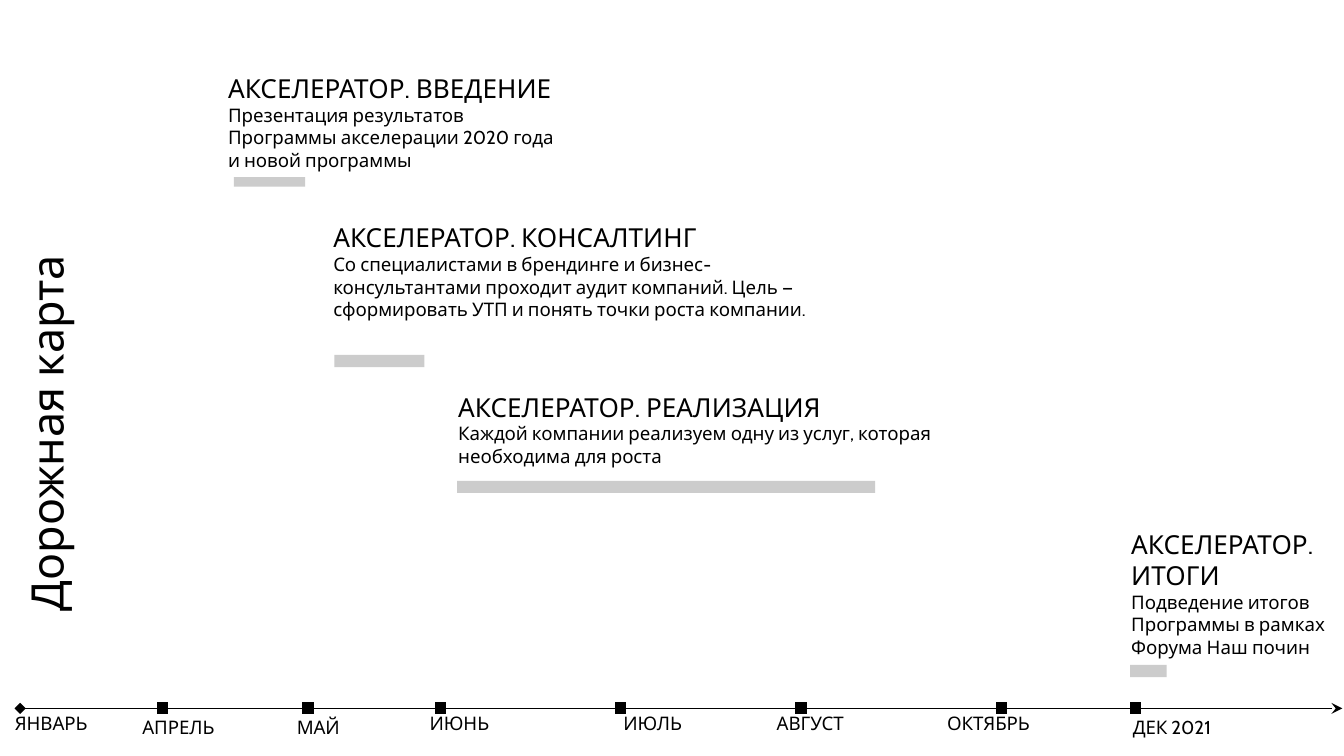
from lxml.etree import SubElement
from pptx import Presentation
from pptx.dml.color import RGBColor
from pptx.enum.shapes import MSO_CONNECTOR, MSO_SHAPE
from pptx.enum.text import MSO_ANCHOR, MSO_AUTO_SIZE, PP_ALIGN
from pptx.oxml.ns import qn
from pptx.util import Cm, Pt

COLORS = {"ink": "000000", "bar": "CCCCCC"}
FONT = "Cabin"
INSET = Cm(0.25)

# Heading, description, text box, duration bar (left, top, width, height in cm)
PHASES = [
    ("АКСЕЛЕРАТОР. ВВЕДЕНИЕ",
     "Презентация результатов Программы акселерации 2020 года и новой программы",
     (4.06, 1.12, 6.71, 1.17), (4.42, 3.35, 1.35, 0.18)),
    ("АКСЕЛЕРАТОР. КОНСАЛТИНГ",
     "Со специалистами в брендинге и бизнес-консультантами проходит аудит компаний. "
     "Цель — сформировать УТП и понять точки роста компании.",
     (6.05, 3.94, 9.5, 2.57), (6.32, 6.71, 1.7, 0.23)),
    ("АКСЕЛЕРАТОР. РЕАЛИЗАЦИЯ",
     "Каждой компании реализуем одну из услуг, которая необходима для роста",
     (8.41, 7.14, 10.31, 1.45), (8.64, 9.09, 7.9, 0.23)),
    ("АКСЕЛЕРАТОР. ИТОГИ",
     "Подведение итогов Программы в рамках Форума Наш почин",
     (21.13, 9.73, 4.19, 2.97), (21.36, 12.57, 0.69, 0.23)),
]

# Month, tick position, label left, label drop below the axis box top, label width (cm)
MONTHS = [
    ("ЯНВАРЬ", None, 0.03, 0, 3.02),
    ("АПРЕЛЬ", 3.07, 2.44, 0.07, 3.1),
    ("МАЙ", 5.82, 5.36, 0.07, 3.1),
    ("ИЮНЬ", 8.33, 7.87, 0, 3.1),
    ("ИЮЛЬ", 11.73, 11.53, 0, 3.1),
    ("АВГУСТ", 15.14, 14.43, 0, 3.58),
    ("ОКТЯБРЬ", 18.92, 17.65, 0, 3.96),
    ("ДЕК 2021", 21.46, 21.16, 0.07, 2.87),
]


def color(name):
    return RGBColor.from_string(COLORS[name])


def write(frame, lines):
    """Fill a text frame with one paragraph per (text, size) pair."""
    frame.word_wrap = True
    frame.auto_size = MSO_AUTO_SIZE.NONE
    frame.vertical_anchor = MSO_ANCHOR.TOP
    frame.margin_left = frame.margin_right = INSET
    frame.margin_top = frame.margin_bottom = INSET
    for index, (text, size) in enumerate(lines):
        paragraph = frame.add_paragraph() if index else frame.paragraphs[0]
        paragraph.alignment = PP_ALIGN.LEFT
        run = paragraph.add_run()
        run.text = text
        run.font.name = FONT
        run.font.size = Pt(size)
        run.font.color.rgb = color("ink")


def add_text(slide, box, lines):
    write(slide.shapes.add_textbox(*map(Cm, box)).text_frame, lines)


def add_line(slide, start, end, weight, head=None, tail=None):
    line = slide.shapes.add_connector(
        MSO_CONNECTOR.STRAIGHT, *map(Cm, (*start, *end)))
    line.line.color.rgb = color("ink")
    line.line.width = Pt(weight)
    outline = line.line._get_or_add_ln()
    for tag, style in (("a:headEnd", head), ("a:tailEnd", tail)):
        if style:
            SubElement(outline, qn(tag), type=style)
    SubElement(line._element.spPr, qn("a:effectLst"))


def add_title(slide, box):
    title = slide.shapes.title
    title.left, title.top, title.width, title.height = map(Cm, box)
    title.rotation = 270
    write(title.text_frame, [("Дорожная карта", 24)])


def add_phase(slide, text_box, bar_box, heading, description):
    add_text(slide, text_box, [(heading, 14), (description, 10)])
    bar = slide.shapes.add_shape(MSO_SHAPE.RECTANGLE, *map(Cm, bar_box))
    bar.shadow.inherit = False
    bar.fill.solid()
    bar.fill.fore_color.rgb = color("bar")
    bar.line.fill.background()


def add_timeline(slide, box):
    """Draw the axis with its month ticks and labels; ticks use slide positions."""
    left, top, width, height = box
    axis = top + 0.18
    for month, tick, label_left, drop, label_width in MONTHS:
        if tick is not None:
            add_line(slide, (tick, axis - 0.12), (tick, axis + 0.11), 6)
        add_text(slide, (label_left, top + drop, label_width, height), [(month, 10)])
    add_line(slide, (left, axis), (left + width, axis), 0.75, "diamond", "stealth")


def main():
    deck = Presentation()
    deck.slide_width, deck.slide_height = Cm(25.4), Cm(14.29)
    slide = deck.slides.add_slide(deck.slide_layouts[5])
    add_title(slide, (-3.68, 7.11, 8.48, 0.91))
    for heading, description, text_box, bar_box in PHASES:
        add_phase(slide, text_box, bar_box, heading, description)
    add_timeline(slide, (0.38, 13.21, 24.99, 0.79))
    deck.save("out.pptx")


if __name__ == "__main__":
    main()
